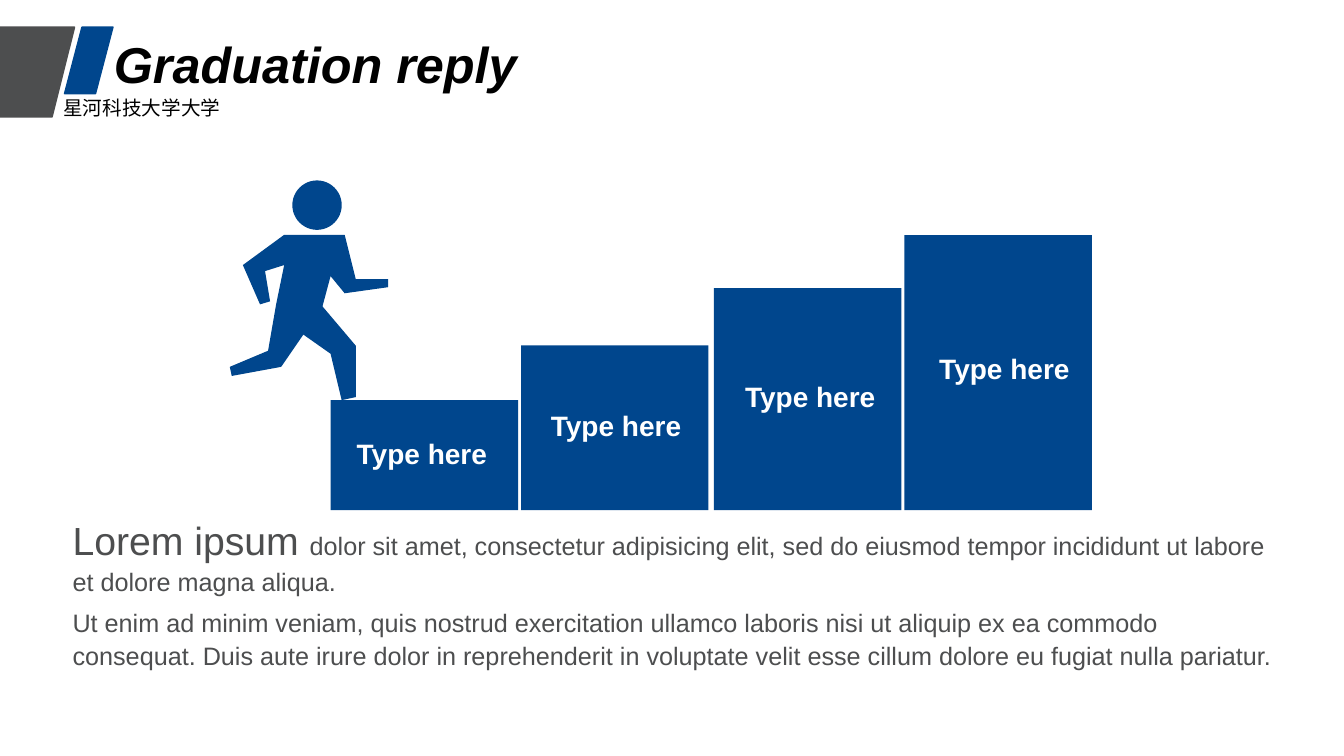
from lxml.etree import SubElement
from pptx import Presentation
from pptx.dml.color import RGBColor
from pptx.enum.shapes import MSO_SHAPE
from pptx.enum.text import MSO_AUTO_SIZE, PP_ALIGN
from pptx.oxml.ns import qn
from pptx.util import Pt

BLUE = "00468D"
GRAY = "4D4E4F"
BLACK = "000000"
WHITE = "FFFFFF"

RUNNER_BODY = [
    (282, 233), (342, 233), (353, 277), (385, 277), (385, 285), (342, 291),
    (328, 274), (320, 304), (353, 343), (353, 394), (339, 397), (328, 351),
    (301, 332), (279, 364), (230, 373), (228, 364), (266, 348), (274, 302),
    (282, 263), (263, 269), (268, 299), (258, 302), (241, 263),
]
STEPS = [(236.2, 285.8), (372.2, 246.7), (510, 205.9), (646, 168)]
STEP_WIDTH = 133.9
STEP_BOTTOM = 364.4
LOREM_LEAD = "Lorem ipsum "
LOREM_FIRST = (
    "dolor sit amet, consectetur adipisicing elit, sed do eiusmod tempor "
    "incididunt ut labore et dolore magna aliqua."
)
LOREM_SECOND = (
    "Ut enim ad minim veniam, quis nostrud exercitation ullamco laboris nisi "
    "ut aliquip ex ea commodo consequat. Duis aute irure dolor in "
    "reprehenderit in voluptate velit esse cillum dolore eu fugiat nulla "
    "pariatur."
)


def color(hex_code):
    return RGBColor.from_string(hex_code)


def paint(shape, fill, outlined=False):
    shape.shadow.inherit = False
    shape.fill.solid()
    shape.fill.fore_color.rgb = color(fill)
    if outlined:
        shape.line.color.rgb = color(fill)
        shape.line.width = Pt(1)
    else:
        shape.line.fill.background()


def add_block(slide, kind, left, top, width, height, fill, outlined=False):
    block = slide.shapes.add_shape(
        kind, Pt(left), Pt(top), Pt(width), Pt(height)
    )
    paint(block, fill, outlined)
    return block


def add_runner(slide):
    builder = slide.shapes.build_freeform(*RUNNER_BODY[0], scale=Pt(0.72))
    builder.add_line_segments(RUNNER_BODY[1:], close=True)
    paint(builder.convert_to_shape(), BLUE)
    add_block(slide, MSO_SHAPE.OVAL, 208.8, 128.9, 35.3, 35.3, BLUE)


def style_run(run, size, ink, bold=False, italic=False):
    run.font.name = "Arial"
    run.font.size = Pt(size)
    run.font.bold = bold
    run.font.italic = italic
    run.font.color.rgb = color(ink)


def add_text_frame(slide, left, top, width, height, wrap=False):
    box = slide.shapes.add_textbox(Pt(left), Pt(top), Pt(width), Pt(height))
    frame = box.text_frame
    frame.word_wrap = wrap
    frame.auto_size = MSO_AUTO_SIZE.SHAPE_TO_FIT_TEXT
    return frame


def add_label(slide, text, bounds, size, ink, bold=False, italic=False,
              align=PP_ALIGN.LEFT):
    frame = add_text_frame(slide, *bounds)
    frame.text = text
    line = frame.paragraphs[0]
    line.alignment = align
    style_run(line.runs[0], size, ink, bold, italic)


def add_text_shadow(run):
    properties = run.font._element
    effects = SubElement(properties, qn("a:effectLst"))
    properties.find(qn("a:solidFill")).addnext(effects)
    shadow = SubElement(
        effects, qn("a:outerShdw"),
        blurRad=str(Pt(3)), dist=str(Pt(3)), dir="2700000", algn="tl",
    )
    shade = SubElement(shadow, qn("a:srgbClr"), val=BLACK)
    SubElement(shade, qn("a:alpha"), val="43000")


def add_summary(slide):
    frame = add_text_frame(slide, 46.1, 363.6, 878.4, 110.9, wrap=True)
    frame.margin_left = frame.margin_right = Pt(5.76)
    frame.margin_top = frame.margin_bottom = Pt(2.88)
    first = frame.paragraphs[0]
    first.text = LOREM_LEAD
    first.add_run().text = LOREM_FIRST
    second = frame.add_paragraph()
    second.text = LOREM_SECOND
    for paragraph in (first, second):
        paragraph.space_after = Pt(6)
        paragraph.line_spacing = 1.08
        for run in paragraph.runs:
            style_run(run, 28 if run.text == LOREM_LEAD else 18, GRAY)
            add_text_shadow(run)


def add_header(slide):
    add_block(slide, MSO_SHAPE.PARALLELOGRAM, -28.8, 19.4, 82.1, 64.1, GRAY,
              outlined=True)
    accent = add_block(slide, MSO_SHAPE.PARALLELOGRAM, 46.1, 19.4, 34.6, 47.5,
                       BLUE, outlined=True)
    accent.adjustments[0] = 0.36
    add_label(slide, "Graduation reply", (74.2, 20.2, 305.3, 51.1), 36, BLACK,
              bold=True, italic=True)
    add_label(slide, "星河科技大学大学", (38.2, 64.8, 127.4, 24.5), 14, BLACK)


def add_staircase(slide):
    for left, top in STEPS:
        add_block(slide, MSO_SHAPE.RECTANGLE, left, top, STEP_WIDTH,
                  STEP_BOTTOM - top, BLUE)
    for index in range(len(STEPS)):
        bounds = (247 + 138.7 * index, 308.2 - 20.2 * index, 108.7, 31.7)
        add_label(slide, "Type here", bounds, 20, WHITE, bold=True,
                  align=PP_ALIGN.CENTER)


def main():
    presentation = Presentation()
    presentation.slide_width = Pt(960)
    presentation.slide_height = Pt(540)
    slide = presentation.slides.add_slide(presentation.slide_layouts[6])
    add_header(slide)
    add_runner(slide)
    add_staircase(slide)
    add_summary(slide)
    presentation.save("out.pptx")


if __name__ == "__main__":
    main()
